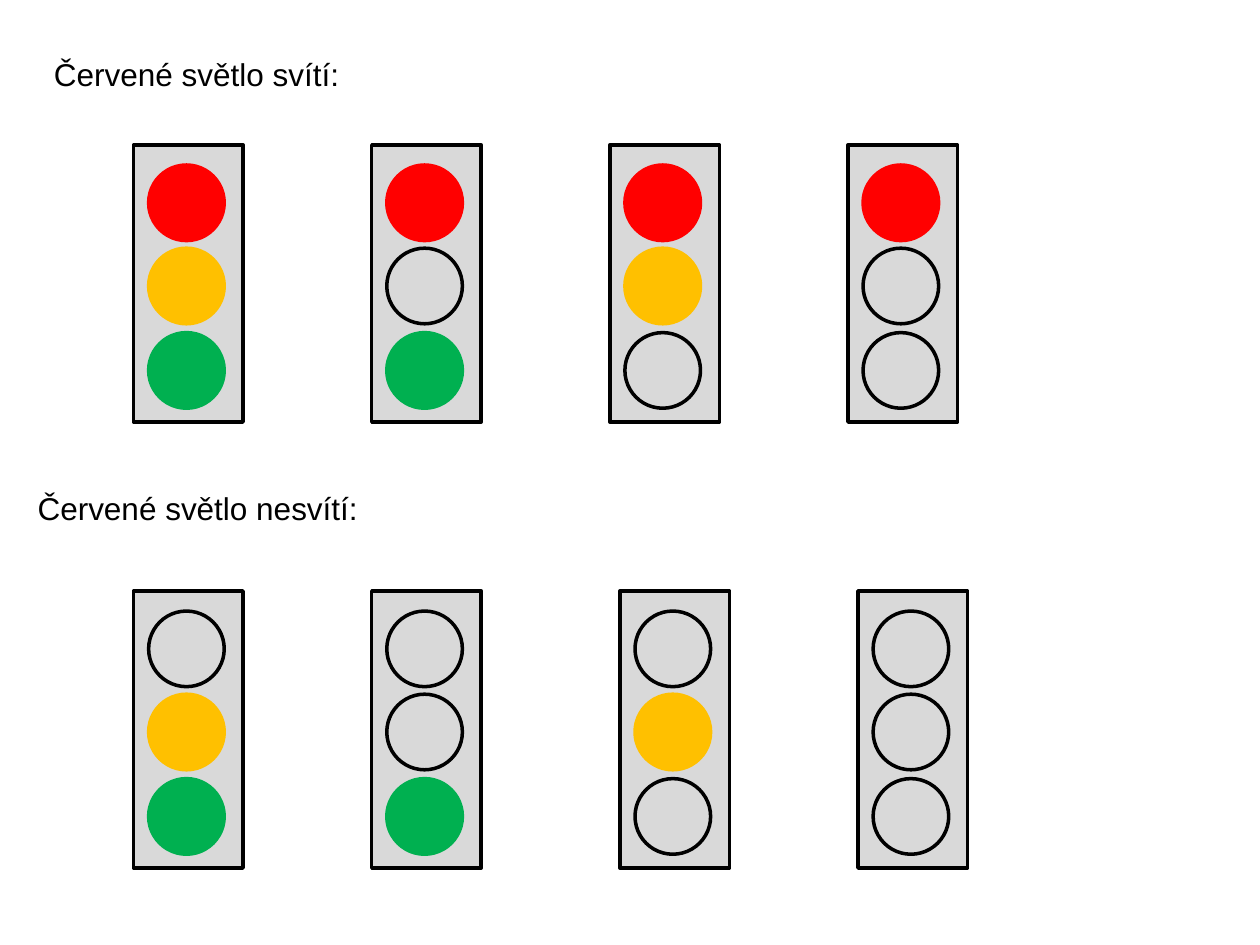
from dataclasses import dataclass

from pptx import Presentation
from pptx.dml.color import RGBColor
from pptx.enum.shapes import MSO_SHAPE
from pptx.enum.text import MSO_AUTO_SIZE
from pptx.util import Inches, Pt


@dataclass(frozen=True)
class Theme:
    black: RGBColor = RGBColor(0x00, 0x00, 0x00)
    housing: RGBColor = RGBColor(0xD9, 0xD9, 0xD9)
    red: RGBColor = RGBColor(0xFF, 0x00, 0x00)
    amber: RGBColor = RGBColor(0xFF, 0xC0, 0x00)
    green: RGBColor = RGBColor(0x00, 0xB0, 0x50)
    font: str = "Arial"
    text_size: Pt = Pt(18)
    outline: Pt = Pt(2)


THEME = Theme()
LAMP_COLORS = (THEME.red, THEME.amber, THEME.green)

HOUSING_WIDTH, HOUSING_HEIGHT = 0.87, 2.2
LAMP_SIZE = 0.6
LAMP_LEFT = 0.12
LAMP_TOPS = (0.16, 0.82, 1.49)

# Each state says whether the red, amber and green lamps are lit
RED_ON = [
    (1.06, (True, True, True)),
    (2.95, (True, False, True)),
    (4.84, (True, True, False)),
    (6.73, (True, False, False)),
]
RED_OFF = [
    (1.06, (False, True, True)),
    (2.95, (False, False, True)),
    (4.92, (False, True, False)),
    (6.81, (False, False, False)),
]


def add_outlined(group, kind, left, top, width, height, fill, line):
    shape = group.shapes.add_shape(
        kind, Inches(left), Inches(top), Inches(width), Inches(height))
    shape.shadow.inherit = False
    if fill is None:
        shape.fill.background()
    else:
        shape.fill.solid()
        shape.fill.fore_color.rgb = fill
    shape.line.color.rgb = line
    shape.line.width = THEME.outline


def add_traffic_light(page, left, top, state):
    group = page.shapes.add_group_shape()
    add_outlined(group, MSO_SHAPE.RECTANGLE, left, top,
                 HOUSING_WIDTH, HOUSING_HEIGHT, THEME.housing, THEME.black)
    for lamp_top, color, lit in zip(LAMP_TOPS, LAMP_COLORS, state):
        add_outlined(group, MSO_SHAPE.OVAL, left + LAMP_LEFT, top + lamp_top,
                     LAMP_SIZE, LAMP_SIZE,
                     color if lit else None, color if lit else THEME.black)


def add_heading(page, text, left, top, width):
    box = page.shapes.add_textbox(
        Inches(left), Inches(top), Inches(width), Inches(0.4))
    frame = box.text_frame
    frame.word_wrap = False
    frame.auto_size = MSO_AUTO_SIZE.SHAPE_TO_FIT_TEXT
    frame.text = text
    font = frame.paragraphs[0].runs[0].font
    font.name = THEME.font
    font.size = THEME.text_size
    font.color.rgb = THEME.black


def main():
    deck = Presentation()
    deck.slide_width, deck.slide_height = Inches(10), Inches(7.5)
    page = deck.slides.add_slide(deck.slide_layouts[6])

    # Rows of traffic lights
    for top, lights in ((1.15, RED_ON), (4.69, RED_OFF)):
        for left, state in lights:
            add_traffic_light(page, left, top, state)

    # Row headings
    add_heading(page, "Červené světlo svítí:", 0.33, 0.39, 2.47)
    add_heading(page, "Červené světlo nesvítí:", 0.2, 3.83, 2.74)

    deck.save("out.pptx")


if __name__ == "__main__":
    main()
